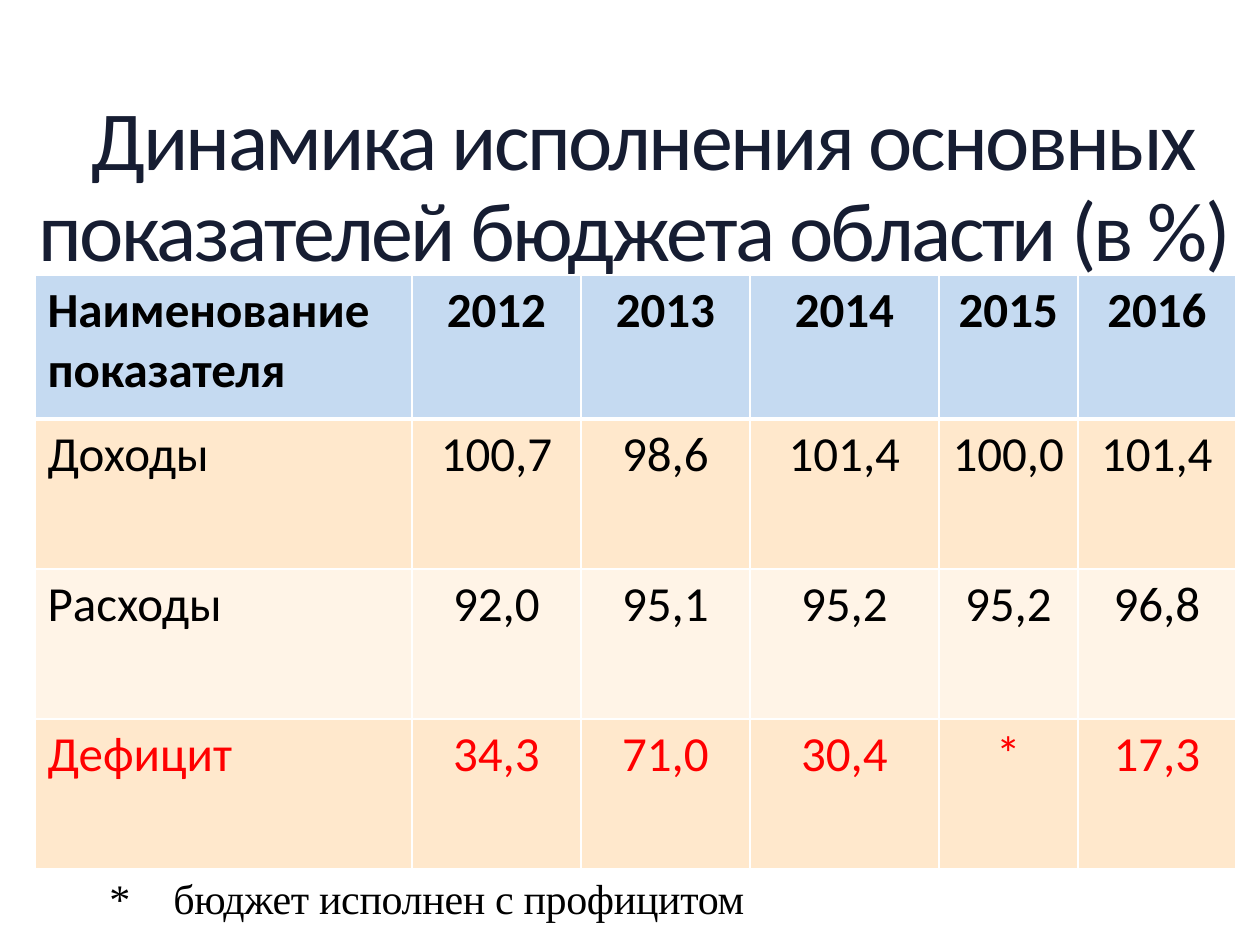
from pptx import Presentation
from pptx.dml.color import RGBColor
from pptx.enum.text import MSO_ANCHOR, PP_ALIGN
from pptx.oxml.ns import qn
from pptx.util import Pt
from lxml import etree

EMU_PER_PX = 914400 // 126
LEFT, CENTER, JUSTIFY = PP_ALIGN.LEFT, PP_ALIGN.CENTER, PP_ALIGN.JUSTIFY
MIDDLE = MSO_ANCHOR.MIDDLE

NAVY = RGBColor(0x16, 0x1D, 0x32)
BLACK = RGBColor(0, 0, 0)
RED = RGBColor(0xFF, 0, 0)
WHITE = RGBColor(0xFF, 0xFF, 0xFF)
HEADER_BLUE = RGBColor(0xC5, 0xDA, 0xF1)
PEACH = RGBColor(0xFF, 0xE8, 0xCC)
PALE_PEACH = RGBColor(0xFF, 0xF4, 0xE7)

COL_WIDTHS = [377, 169, 169, 189, 139, 158]
ROW_HEIGHTS = [144, 150, 150, 150]
# Each row: fill, text colour, cell texts
ROWS = [
    (HEADER_BLUE, BLACK, ["Наименование показателя", "2012", "2013", "2014", "2015", "2016"]),
    (PEACH, BLACK, ["Доходы", "100,7", "98,6", "101,4", "100,0", "101,4"]),
    (PALE_PEACH, BLACK, ["Расходы", "92,0", "95,1", "95,2", "95,2", "96,8"]),
    (PEACH, RED, ["Дефицит", "34,3", "71,0", "30,4", "*", "17,3"]),
]


def px(n):
    return n * EMU_PER_PX


def format_text(p, font, size, color, bold=False, spacing=0):
    for r in p.runs:
        r.font.name = font
        r.font.size = Pt(size)
        r.font.bold = bold
        r.font.color.rgb = color
        if spacing:
            r.font._element.set("spc", str(spacing))


def set_borders(cell, bottom_width):
    tc_pr = cell._tc.get_or_add_tcPr()
    widths = {"a:lnL": 1, "a:lnR": 1, "a:lnT": 1, "a:lnB": bottom_width}
    for i, (tag, width) in enumerate(widths.items()):
        ln = etree.Element(qn(tag), w=str(Pt(width)))
        fill = etree.SubElement(ln, qn("a:solidFill"))
        etree.SubElement(fill, qn("a:srgbClr"), val=str(WHITE))
        tc_pr.insert(i, ln)


def add_title(slide, text):
    sp = slide.shapes.title
    sp.left, sp.top, sp.width, sp.height = px(35), px(84), px(1216), px(210)
    tf = sp.text_frame
    tf.text = text
    tf.word_wrap = True
    tf.vertical_anchor = MIDDLE
    tf.margin_left = tf.margin_right = tf.margin_top = tf.margin_bottom = 0
    p = tf.paragraphs[0]
    p.alignment = CENTER
    p.line_spacing = 0.9
    format_text(p, "Calibri", 48, NAVY, spacing=-150)


def add_budget_table(slide):
    table = slide.shapes.add_table(
        len(ROWS), len(COL_WIDTHS), px(35), px(275),
        px(sum(COL_WIDTHS)), px(sum(ROW_HEIGHTS))).table
    for col, width in zip(table.columns, COL_WIDTHS):
        col.width = px(width)
    for row, height in zip(table.rows, ROW_HEIGHTS):
        row.height = px(height)
    for i, (fill, color, texts) in enumerate(ROWS):
        for j, text in enumerate(texts):
            cell = table.cell(i, j)
            cell.fill.solid()
            cell.fill.fore_color.rgb = fill
            set_borders(cell, 3 if i == 0 else 1)
            cell.text = text
            p = cell.text_frame.paragraphs[0]
            p.alignment = CENTER if j else LEFT
            format_text(p, "Calibri", 28, color, bold=i == 0)


def add_footnote(slide, text):
    tf = slide.shapes.add_textbox(px(35), px(866), px(774), px(63)).text_frame
    tf.word_wrap = True
    p = tf.paragraphs[0]
    p.text = text
    p.alignment = JUSTIFY
    # First-line indent and the tab stop after the asterisk
    p_pr = p._p.get_or_add_pPr()
    p_pr.set("marL", "0")
    p_pr.set("indent", str(px(62)))
    tabs = etree.SubElement(p_pr, qn("a:tabLst"))
    etree.SubElement(tabs, qn("a:tab"), pos=str(px(126)), algn="l")
    format_text(p, "Times New Roman", 24, BLACK, spacing=-20)


def main():
    prs = Presentation()
    prs.slide_width, prs.slide_height = px(1260), px(945)
    slide = prs.slides.add_slide(prs.slide_layouts[5])
    add_title(slide, "Динамика исполнения основных показателей бюджета области (в %) ")
    add_budget_table(slide)
    add_footnote(slide, "*\tбюджет исполнен с профицитом")
    prs.save("out.pptx")


if __name__ == "__main__":
    main()
